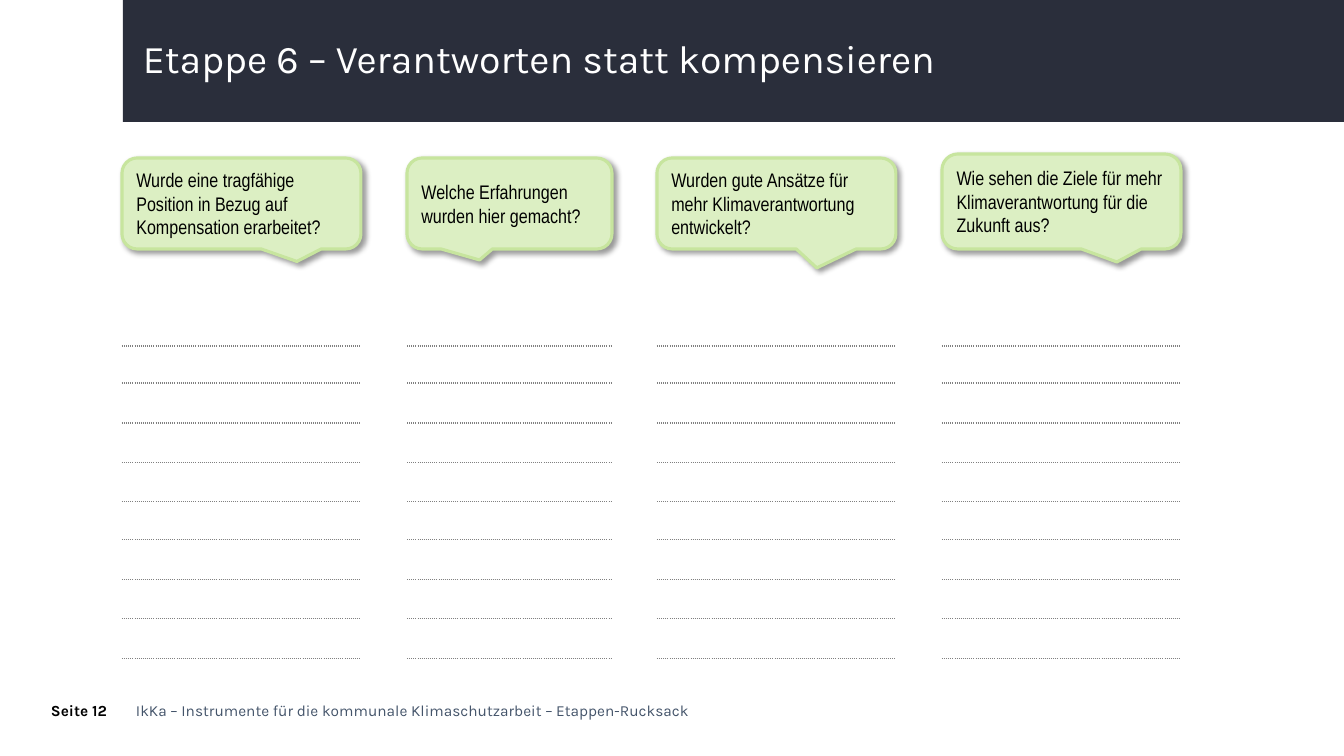
from dataclasses import dataclass

import pptx
import pptx.dml.color
import pptx.enum.shapes
import pptx.enum.text
import pptx.oxml
import pptx.oxml.ns
import pptx.util
from pptx.dml.color import RGBColor

NAVY = RGBColor(0x2A, 0x2E, 0x3B)
SLATE = RGBColor(0x44, 0x54, 0x6A)
WHITE = RGBColor(0xFF, 0xFF, 0xFF)
BLACK = RGBColor(0x00, 0x00, 0x00)
PALE_GREEN = RGBColor(0xDC, 0xEF, 0xC3)
GREEN = RGBColor(0xC7, 0xE5, 0x9E)
GREY = RGBColor(0x80, 0x80, 0x80)

EMU_PER_PX = 12192000 / 1344
TABLE_TOP = 308
ROW_HEIGHTS = (38, 37, 40, 40, 39, 38, 40, 39, 40)
NAMESPACE = pptx.oxml.ns.nsdecls("a")


@dataclass(frozen=True)
class Label:
    text: str
    left: int
    top: int
    width: int
    height: int
    inset: tuple[int, int]
    size: int
    color: RGBColor
    bold: bool = False
    line_spacing: float = 1.0


@dataclass(frozen=True)
class Question:
    text: str
    left: int
    top: int
    width: int
    height: int
    tip: tuple[float, float]


LABELS = (
    Label("IkKa – Instrumente für die kommunale Klimaschutzarbeit – Etappen-Rucksack",
          136, 701, 561, 19, (0, 0), 11, SLATE),
    Label("Etappe 6 – Verantworten statt kompensieren",
          133, 35, 1159, 62, (10, 5), 28, WHITE, line_spacing=0.9),
    Label("Seite 12", 51, 701, 74, 24, (0, 0), 11, BLACK, bold=True),
)

QUESTIONS = (
    Question("Wurde eine tragfähige Position in Bezug auf Kompensation erarbeitet?",
             122, 158, 239, 91, (0.232, 0.637)),
    Question("Welche Erfahrungen wurden hier gemacht?",
             407, 158, 205, 91, (-0.146, 0.621)),
    Question("Wurden gute Ansätze für mehr Klimaverantwortung entwickelt?",
             657, 158, 239, 91, (0.169, 0.708)),
    Question("Wie sehen die Ziele für mehr Klimaverantwortung für die Zukunft aus?",
             942, 154, 239, 95, (0.232, 0.637)),
)


def px(length: int) -> pptx.util.Emu:
    return pptx.util.Emu(round(length * EMU_PER_PX))


def set_attributes(target: object, values: dict) -> None:
    for name, value in values.items():
        setattr(target, name, value)


def write_text(frame, text: str, font: dict, line_spacing: float = 1.0) -> None:
    frame.word_wrap = True
    paragraph = frame.paragraphs[0]
    set_attributes(paragraph, {
        "alignment": pptx.enum.text.PP_ALIGN.LEFT,
        "line_spacing": line_spacing,
    })
    run = paragraph.add_run()
    run.text = text
    color = font.pop("color")
    set_attributes(run.font, font)
    run.font.color.rgb = color


def add_header(slide) -> None:
    header = slide.shapes.add_shape(
        pptx.enum.shapes.MSO_SHAPE.RECTANGLE, px(123), 0, px(1221), px(122))
    header.shadow.inherit = False
    header.fill.solid()
    header.fill.fore_color.rgb = NAVY
    header.line.fill.background()


def add_label(slide, label: Label) -> None:
    box = slide.shapes.add_textbox(
        px(label.left), px(label.top), px(label.width), px(label.height))
    horizontal, vertical = map(px, label.inset)
    set_attributes(box.text_frame, {
        "margin_left": horizontal, "margin_right": horizontal,
        "margin_top": vertical, "margin_bottom": vertical,
    })
    font = {"name": "Karla", "size": pptx.util.Pt(label.size),
            "bold": label.bold, "color": label.color}
    write_text(box.text_frame, label.text, font, label.line_spacing)


def add_callout(slide, question: Question) -> None:
    callout = slide.shapes.add_shape(
        pptx.enum.shapes.MSO_SHAPE.ROUNDED_RECTANGULAR_CALLOUT,
        px(question.left), px(question.top), px(question.width), px(question.height))
    for index, value in enumerate((*question.tip, 0.167)):
        callout.adjustments[index] = value
    callout.fill.solid()
    callout.fill.fore_color.rgb = PALE_GREEN
    callout.line.color.rgb = GREEN
    callout.line.width = pptx.util.Pt(2.25)
    callout.shadow.inherit = False
    effects = callout.element.spPr.find(pptx.oxml.ns.qn("a:effectLst"))
    effects.append(pptx.oxml.parse_xml(
        f'<a:outerShdw {NAMESPACE} blurRad="{pptx.util.Pt(4)}" dist="{pptx.util.Pt(3)}" '
        f'dir="2700000" algn="tl" rotWithShape="0">'
        f'<a:srgbClr val="{BLACK}"><a:alpha val="40000"/></a:srgbClr></a:outerShdw>'))
    callout.text_frame.vertical_anchor = pptx.enum.text.MSO_ANCHOR.MIDDLE
    font = {"name": "Arial Narrow", "size": pptx.util.Pt(14), "color": BLACK}
    write_text(callout.text_frame, question.text, font)


def format_cell(cell, dotted_sides: str) -> None:
    set_attributes(cell, dict.fromkeys(
        ("margin_left", "margin_right", "margin_top", "margin_bottom"), 0))
    dots = (f'<a:solidFill><a:srgbClr val="{GREY}"/></a:solidFill>'
            '<a:prstDash val="sysDot"/>')
    properties = cell._tc.get_or_add_tcPr()
    for side in "LRTB":
        content = dots if side in dotted_sides else "<a:noFill/>"
        properties.append(pptx.oxml.parse_xml(
            f'<a:ln{side} {NAMESPACE} w="{pptx.util.Pt(1)}">{content}</a:ln{side}>'))
    cell.fill.background()


def add_answer_lines(slide, question: Question) -> None:
    table = slide.shapes.add_table(
        len(ROW_HEIGHTS), 1, px(question.left), px(TABLE_TOP),
        px(question.width), px(sum(ROW_HEIGHTS))).table
    set_attributes(table, {"first_row": False, "horz_banding": False})
    for index, height in enumerate(ROW_HEIGHTS):
        table.rows[index].height = px(height)
        format_cell(table.cell(index, 0), "TB" if index else "B")


def main() -> None:
    presentation = pptx.Presentation()
    set_attributes(presentation, {"slide_width": px(1344), "slide_height": px(756)})
    slide = presentation.slides.add_slide(presentation.slide_layouts[6])
    add_header(slide)
    for label in LABELS:
        add_label(slide, label)
    for question in QUESTIONS:
        add_callout(slide, question)
        add_answer_lines(slide, question)
    presentation.save("out.pptx")


if __name__ == "__main__":
    main()
